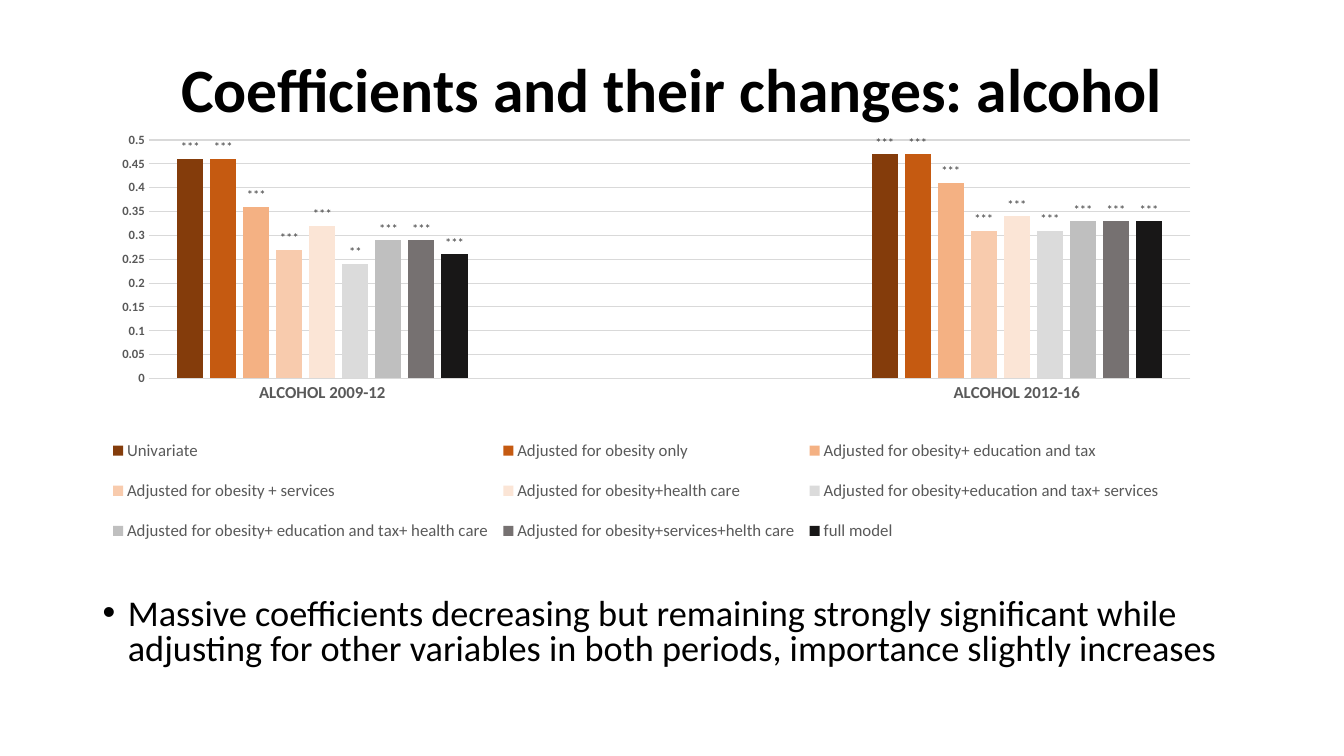
from dataclasses import dataclass

import pptx
import pptx.chart.chart
import pptx.chart.data
import pptx.dml.color
import pptx.enum.chart
import pptx.enum.text
import pptx.oxml
import pptx.oxml.ns
import pptx.slide
import pptx.text.text
import pptx.util

Inches = pptx.util.Inches
Pt = pptx.util.Pt
RGBColor = pptx.dml.color.RGBColor
qn = pptx.oxml.ns.qn

FONT = "Calibri"
BLACK = RGBColor(0x00, 0x00, 0x00)
AXIS_TEXT = RGBColor(0x59, 0x59, 0x59)
LABEL_TEXT = RGBColor(0x40, 0x40, 0x40)
GRID = RGBColor(0xD9, 0xD9, 0xD9)
DARK_BROWN = RGBColor(0x84, 0x3C, 0x0B)
BROWN = RGBColor(0xC5, 0x5A, 0x11)
ORANGE = RGBColor(0xF4, 0xB1, 0x83)
PEACH = RGBColor(0xF8, 0xCB, 0xAD)
CREAM = RGBColor(0xFB, 0xE5, 0xD6)
PALE_GREY = RGBColor(0xDB, 0xDB, 0xDB)
GREY = RGBColor(0xBF, 0xBF, 0xBF)
DARK_GREY = RGBColor(0x76, 0x71, 0x71)
NEAR_BLACK = RGBColor(0x18, 0x17, 0x17)

TITLE = "Coefficients and their changes: alcohol"
FINDING = (
    "Massive coefficients decreasing but remaining strongly significant while "
    "adjusting for other variables in both periods, importance slightly increases"
)
PERIODS = ("ALCOHOL 2009-12", "", "ALCOHOL 2012-16")


@dataclass(frozen=True)
class Model:
    name: str
    first_period: float
    second_period: float
    color: RGBColor
    first_stars: str = "***"
    second_stars: str = "***"


MODELS = (
    Model("Univariate", 0.46, 0.47, DARK_BROWN),
    Model("Adjusted for obesity only", 0.46, 0.47, BROWN),
    Model("Adjusted for obesity+ education and tax", 0.36, 0.41, ORANGE),
    Model("Adjusted for obesity + services", 0.27, 0.31, PEACH),
    Model("Adjusted for obesity+health care", 0.32, 0.34, CREAM),
    Model("Adjusted for obesity+education and tax+ services", 0.24, 0.31, PALE_GREY, "**"),
    Model("Adjusted for obesity+ education and tax+ health care", 0.29, 0.33, GREY),
    Model("Adjusted for obesity+services+helth care", 0.29, 0.33, DARK_GREY),
    Model("full model", 0.26, 0.33, NEAR_BLACK),
)


def style_font(font: pptx.text.text.Font, size: float, color: RGBColor, bold: bool = False) -> None:
    font.name = FONT
    font.size = Pt(size)
    font.bold = bold
    font.color.rgb = color


def manual_layout(x: float, y: float, width: float, height: float, inner: bool = False):
    target = '<c:layoutTarget val="inner"/>' if inner else ""
    return pptx.oxml.parse_xml(
        f'<c:layout {pptx.oxml.ns.nsdecls("c")}><c:manualLayout>{target}'
        '<c:xMode val="edge"/><c:yMode val="edge"/>'
        f'<c:x val="{x}"/><c:y val="{y}"/><c:w val="{width}"/><c:h val="{height}"/>'
        "</c:manualLayout></c:layout>"
    )


def add_title(slide: pptx.slide.Slide) -> None:
    title = slide.shapes.title
    title.left, title.top = Inches(0.92), Inches(0.4)
    title.width, title.height = Inches(11.5), Inches(1.03)
    title.text_frame.text = TITLE
    title.text_frame.vertical_anchor = pptx.enum.text.MSO_ANCHOR.MIDDLE
    paragraph = title.text_frame.paragraphs[0]
    paragraph.alignment = pptx.enum.text.PP_ALIGN.CENTER
    paragraph.line_spacing = 0.9
    style_font(paragraph.font, 44, BLACK, bold=True)


def add_finding(slide: pptx.slide.Slide) -> None:
    box = slide.shapes.add_textbox(Inches(0.92), Inches(5.89), Inches(11.5), Inches(0.86))
    box.text_frame.word_wrap = True
    paragraph = box.text_frame.paragraphs[0]
    paragraph.text = FINDING
    paragraph.line_spacing = 0.8
    paragraph.space_before = Pt(10)
    style_font(paragraph.font, 25.9, BLACK)
    properties = paragraph._p.get_or_add_pPr()
    properties.set("marL", str(Inches(0.25)))
    properties.set("indent", str(Inches(-0.25)))
    for tag, attribute in (("buFont", 'typeface="Arial"'), ("buChar", 'char="•"')):
        bullet = pptx.oxml.parse_xml(f'<a:{tag} {pptx.oxml.ns.nsdecls("a")} {attribute}/>')
        properties.find(qn("a:defRPr")).addprevious(bullet)


def format_axes(chart: pptx.chart.chart.Chart) -> None:
    for axis, size in ((chart.category_axis, 12), (chart.value_axis, 9)):
        axis.major_tick_mark = pptx.enum.chart.XL_TICK_MARK.NONE
        axis.minor_tick_mark = pptx.enum.chart.XL_TICK_MARK.NONE
        style_font(axis.tick_labels.font, size, AXIS_TEXT, bold=True)
    value_axis = chart.value_axis
    value_axis.minimum_scale, value_axis.maximum_scale = 0, 0.5
    value_axis.major_unit = 0.05
    value_axis.has_major_gridlines = True
    value_axis.format.line.fill.background()
    for line in (chart.category_axis.format.line, value_axis.major_gridlines.format.line):
        line.color.rgb = GRID
        line.width = Pt(0.75)


def format_legend(chart: pptx.chart.chart.Chart) -> None:
    chart.has_legend = True
    legend = chart.legend
    legend.position = pptx.enum.chart.XL_LEGEND_POSITION.BOTTOM
    legend.include_in_layout = False
    style_font(legend.font, 12, AXIS_TEXT)
    for layout in legend._element.findall(qn("c:layout")):
        legend._element.remove(layout)
    legend._element.find(qn("c:legendPos")).addnext(manual_layout(0.01, 0.63, 0.95, 0.3))


def add_coefficient_chart(slide: pptx.slide.Slide) -> None:
    data = pptx.chart.data.CategoryChartData(number_format="General")
    data.categories = PERIODS
    for model in MODELS:
        data.add_series(model.name, (model.first_period, None, model.second_period))
    chart = slide.shapes.add_chart(
        pptx.enum.chart.XL_CHART_TYPE.COLUMN_CLUSTERED,
        Inches(0.92), Inches(1.25), Inches(11.11), Inches(4.64), data,
    ).chart
    chart.has_title = False
    style_font(chart.font, 10, BLACK)
    plot = chart.plots[0]
    plot.gap_width = 219
    plot.overlap = -27
    plot.vary_by_categories = False
    for model, series in zip(MODELS, plot.series):
        series.format.fill.solid()
        series.format.fill.fore_color.rgb = model.color
        for index, stars in ((0, model.first_stars), (2, model.second_stars)):
            label = series.points[index].data_label
            label.position = pptx.enum.chart.XL_LABEL_POSITION.OUTSIDE_END
            run = label.text_frame.paragraphs[0].add_run()
            run.text = stars
            style_font(run.font, 9, LABEL_TEXT)
    format_axes(chart)
    format_legend(chart)
    plot_area = chart._chartSpace.chart.plotArea
    for layout in plot_area.findall(qn("c:layout")):
        plot_area.remove(layout)
    plot_area.insert(0, manual_layout(0.05, 0.03, 0.93, 0.51, inner=True))


def main() -> None:
    presentation = pptx.Presentation()
    presentation.slide_width = Inches(13.33)
    presentation.slide_height = Inches(7.5)
    slide = presentation.slides.add_slide(presentation.slide_layouts[5])
    add_title(slide)
    add_finding(slide)
    add_coefficient_chart(slide)
    presentation.save("out.pptx")


if __name__ == "__main__":
    main()
